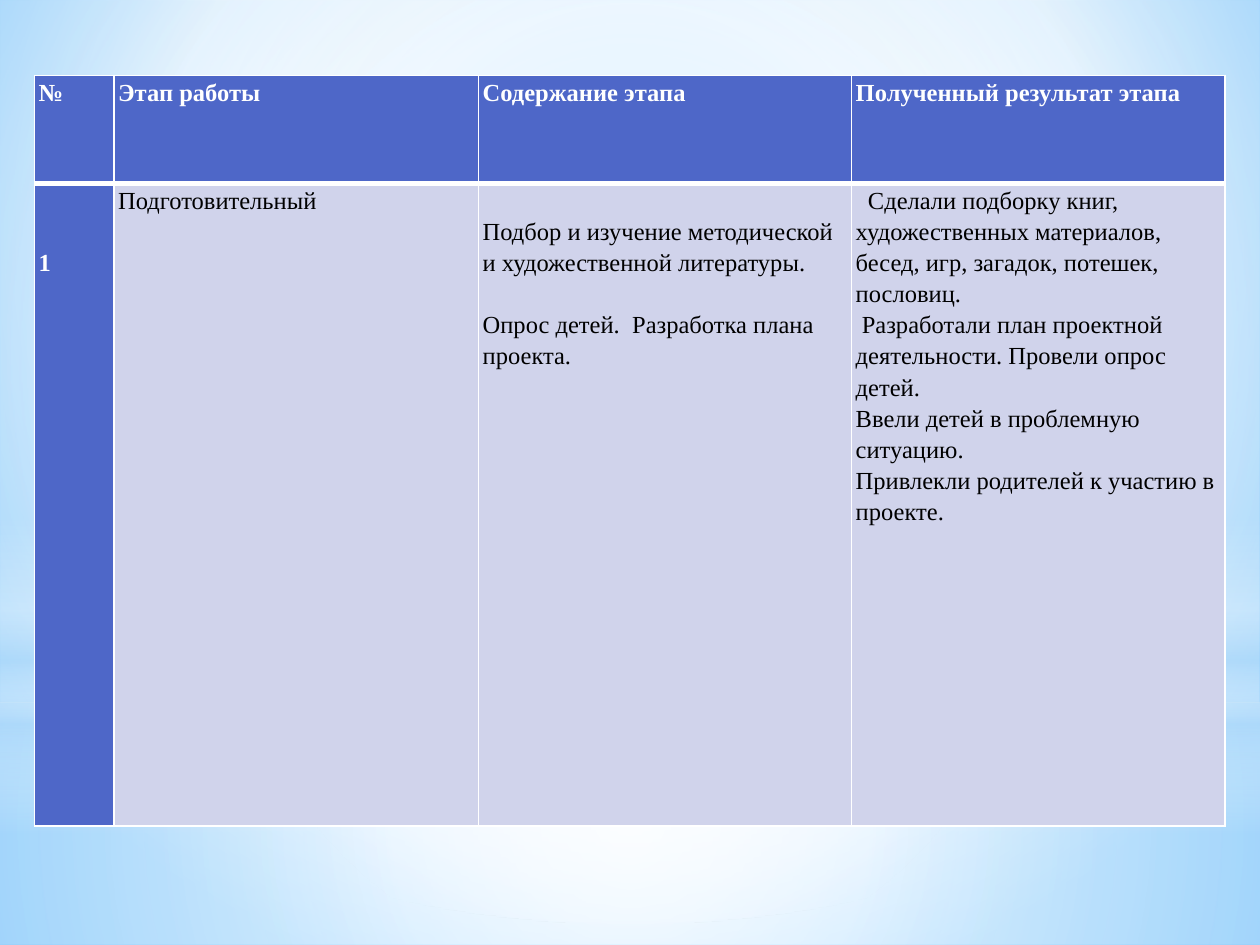
import pptx
import pptx.dml.color
import pptx.enum.shapes
import pptx.oxml
import pptx.oxml.ns
import pptx.util

Cm = pptx.util.Cm
Pt = pptx.util.Pt
SHAPES = pptx.enum.shapes.MSO_SHAPE
NAMESPACE = pptx.oxml.ns.nsdecls("a")

FONT = "Times New Roman"
BLUE, LILAC, WHITE, BLACK, SKY = "4E67C8", "D0D3EB", "FFFFFF", "000000", "B4DCFA"
LINE_HEIGHT = Pt(17.8)
SPACE_WIDTH = Pt(3.5)
CENTRE = (50, 50, 50, 50)

HEADERS = ["№", "Этап работы", "Содержание этапа", "Полученный результат этапа"]
STAGE = [
    ["1"],
    ["Подготовительный"],
    ["Подбор и изучение методической и художественной литературы.",
     "Опрос детей.  Разработка плана проекта."],
    ["Сделали подборку книг,",
     "художественных материалов, бесед, игр, загадок, потешек, пословиц.",
     "Разработали план проектной деятельности. Провели опрос детей.",
     "Ввели детей в проблемную ситуацию.",
     "Привлекли родителей к участию в проекте."],
]
STAGE_LINES_ABOVE = [2, 0, 1, 0]


def color(value):
    return pptx.dml.color.RGBColor.from_string(value)


def fill_gradient(fill, element, stops, focus=None):
    """Stops are (position, colour, opacity) in percent; without a focus the fill runs downwards."""
    fill.solid()
    stop_xml = "".join(
        f'<a:gs pos="{position * 1000}"><a:srgbClr val="{value}">'
        f'<a:alpha val="{opacity * 1000}"/></a:srgbClr></a:gs>'
        for position, value, opacity in stops)
    if focus:
        sides = " ".join(f'{side}="{share * 1000}"' for side, share in zip("ltrb", focus))
        direction = f'<a:path path="circle"><a:fillToRect {sides}/></a:path>'
    else:
        direction = '<a:lin ang="5400000" scaled="0"/>'
    gradient = pptx.oxml.parse_xml(
        f'<a:gradFill {NAMESPACE} rotWithShape="1"><a:gsLst>{stop_xml}</a:gsLst>'
        f'{direction}</a:gradFill>')
    solid = element.find(".//" + pptx.oxml.ns.qn("a:solidFill"))
    solid.getparent().replace(solid, gradient)


def add_glow(slide, kind, top, height, stops, focus=None):
    shape = slide.shapes.add_shape(kind, 0, Cm(top), Cm(25.4), Cm(height))
    shape.shadow.inherit = False
    fill_gradient(shape.fill, shape.element, stops, focus)
    shape.line.fill.background()


def add_backdrop(slide):
    fill_gradient(slide.background.fill, slide.element,
                  [(0, "9ED5FF", 100), (60, WHITE, 100), (100, "5BB9FF", 100)],
                  (20, 10, 20, 60))
    add_glow(slide, SHAPES.RECTANGLE, 14.17, 4.88,
             [(0, WHITE, 91), (37, WHITE, 76), (100, SKY, 79)], CENTRE)
    add_glow(slide, SHAPES.RECTANGLE, 0, 14.17,
             [(0, WHITE, 89), (48, WHITE, 62), (100, SKY, 79)], CENTRE)
    add_glow(slide, SHAPES.RECTANGLE, 10.46, 6.35,
             [(0, WHITE, 0), (29, WHITE, 30), (45, SKY, 40),
              (55, WHITE, 26), (65, SKY, 60), (100, WHITE, 0)])
    add_glow(slide, SHAPES.OVAL, 4.45, 14.17,
             [(0, WHITE, 100), (56, WHITE, 0)], CENTRE)


def set_borders(cell, top, bottom):
    """Draw white borders; the side borders are always 1 pt wide."""
    properties = cell._tc.get_or_add_tcPr()
    widths = {"L": 1, "R": 1, "T": top, "B": bottom}
    for index, (side, width) in enumerate(widths.items()):
        properties.insert(index, pptx.oxml.parse_xml(
            f'<a:ln{side} {NAMESPACE} w="{Pt(width)}"><a:solidFill>'
            f'<a:srgbClr val="{WHITE}"/></a:solidFill></a:ln{side}>'))


def fill_cell(cell, lines, emphasized, lines_above=0):
    cell.fill.solid()
    cell.fill.fore_color.rgb = color(BLUE if emphasized else LILAC)
    cell.margin_left = cell.margin_right = Cm(0.08)
    cell.margin_top = lines_above * LINE_HEIGHT
    cell.margin_bottom = 0
    cell.text_frame.text = "\n".join(lines)
    for paragraph in cell.text_frame.paragraphs:
        paragraph.line_spacing = 1.15
        for run in paragraph.runs:
            run.font.name = FONT
            run.font.size = Pt(14)
            run.font.bold = emphasized
            run.font.color.rgb = color(WHITE if emphasized else BLACK)


def indent_first_line(paragraph, spaces):
    properties = paragraph._p.get_or_add_pPr()
    properties.set("marL", "0")
    properties.set("indent", str(spaces * SPACE_WIDTH))


def add_stage_table(slide):
    table = slide.shapes.add_table(2, 4, Cm(0.7), Cm(1.52), Cm(24), Cm(15.13)).table
    for column, width in zip(table.columns, [1.6, 7.35, 7.52, 7.52]):
        column.width = Cm(width)
    for row, height in zip(table.rows, [2.18, 12.95]):
        row.height = Cm(height)
    for index, header in enumerate(HEADERS):
        cell = table.cell(0, index)
        fill_cell(cell, [header], True)
        set_borders(cell, 1, 3)
    for index, lines in enumerate(STAGE):
        cell = table.cell(1, index)
        fill_cell(cell, lines, index == 0, STAGE_LINES_ABOVE[index])
        set_borders(cell, 3, 1)
    table.cell(1, 2).text_frame.paragraphs[1].space_before = LINE_HEIGHT
    results = table.cell(1, 3).text_frame.paragraphs
    indent_first_line(results[0], 2)
    indent_first_line(results[2], 1)


def main():
    presentation = pptx.Presentation()
    presentation.slide_width = Cm(25.4)
    presentation.slide_height = Cm(19.05)
    slide = presentation.slides.add_slide(presentation.slide_layouts[6])
    add_backdrop(slide)
    add_stage_table(slide)
    presentation.save("out.pptx")


if __name__ == "__main__":
    main()
